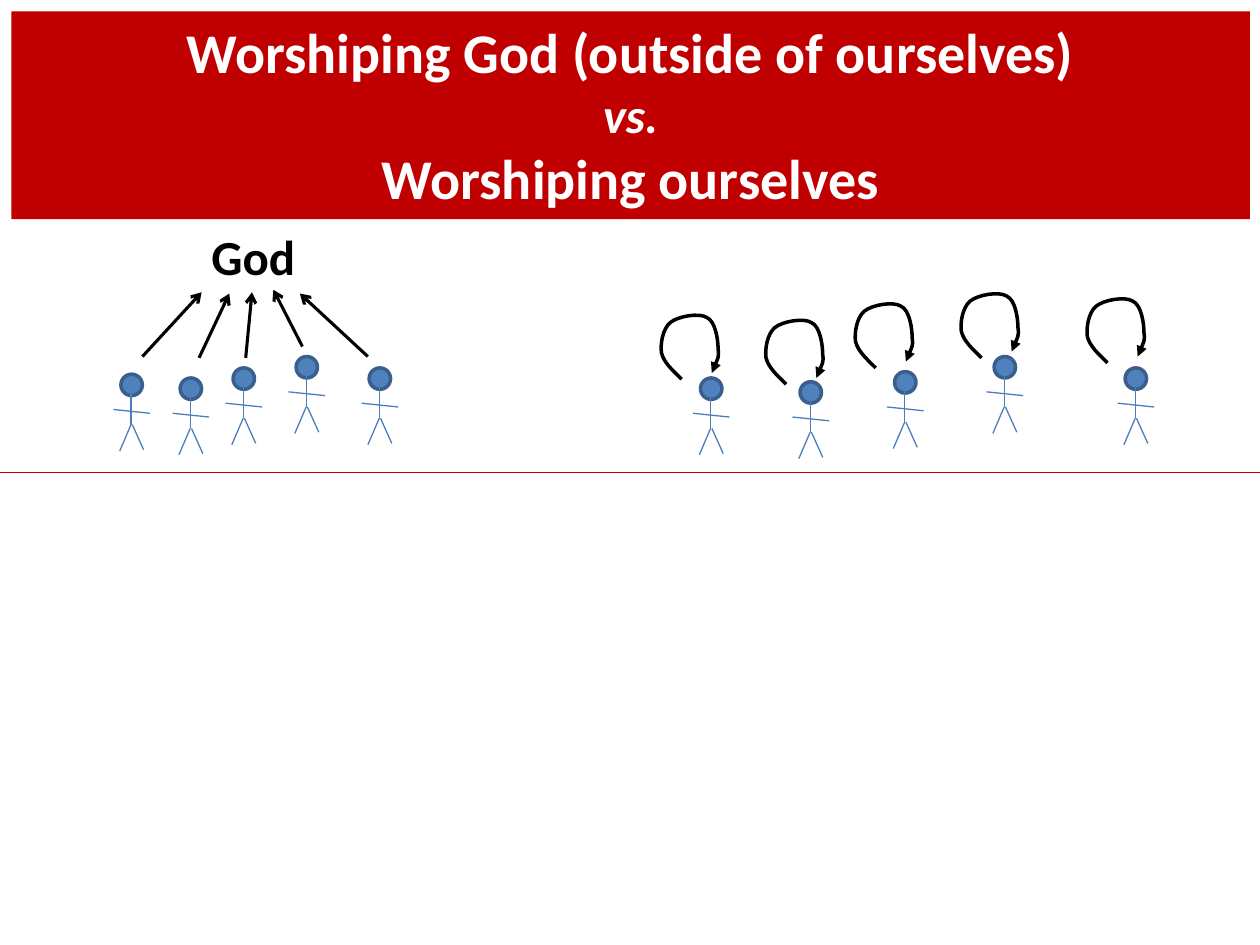
"""Build a slide contrasting worship of God with worship of ourselves."""
from lxml.etree import SubElement
from pptx import Presentation
from pptx.dml.color import RGBColor
from pptx.enum.shapes import MSO_CONNECTOR, MSO_SHAPE
from pptx.enum.text import MSO_ANCHOR, MSO_AUTO_SIZE, PP_ALIGN
from pptx.oxml.ns import qn
from pptx.util import Inches, Pt

COLORS = {
    "banner": "C00000", "banner_text": "FFFFFF", "ink": "000000",
    "head": "4F81BD", "head_line": "3A5F8C", "limb": "4B7EBC",
}
FONT = "Calibri"
TITLE = [
    ("Worshiping God (outside of ourselves)", 32, False),
    ("vs.", 28, True),
    ("Worshiping ourselves", 32, False),
]
HEAD_SIZE = 0.17
GOD_WORSHIPERS = [(0.96, 2.97), (1.43, 3), (1.85, 2.92), (2.35, 2.83), (2.93, 2.92)]
SELF_WORSHIPERS = [(5.56, 3), (6.35, 3.03), (7.1, 2.95), (7.89, 2.83), (8.93, 2.92)]
LIMBS = [
    ((0.08, 0.14), (0.08, 0.4)),
    ((0.09, 0.4), (0.18, 0.6)),
    ((0.08, 0.4), (-0.01, 0.61)),
    ((-0.06, 0.28), (0.23, 0.31)),
]
ARROWS_TO_GOD = [
    ((1.13, 2.83), (1.6, 2.32)),
    ((1.58, 2.84), (1.82, 2.33)),
    ((1.95, 2.84), (2, 2.32)),
    ((2.4, 2.75), (2.17, 2.3)),
    ((2.92, 2.83), (2.38, 2.33)),
]
LOOP_ORIGINS = [(8.63, 2.37), (7.63, 2.33), (6.79, 2.41), (6.08, 2.54), (5.25, 2.5)]
LOOP_SIZE = (0.46, 0.51)
LOOP_OUTLINE = [
    ("moveTo", [(0.16, 0.51)]),
    ("cubicBezTo", [(0.09, 0.44), (0.02, 0.38), (0, 0.3)]),
    ("cubicBezTo", [(-0.01, 0.23), (0.01, 0.11), (0.07, 0.06)]),
    ("cubicBezTo", [(0.13, 0.01), (0.3, -0.02), (0.36, 0.02)]),
    ("cubicBezTo", [(0.43, 0.05), (0.45, 0.2), (0.45, 0.27)]),
    ("cubicBezTo", [(0.46, 0.34), (0.4, 0.46), (0.4, 0.46)]),
    ("lnTo", [(0.4, 0.46)]),
]


def color(name):
    return RGBColor.from_string(COLORS[name])


def style_line(shape, name, width, arrowhead=None):
    shape.line.color.rgb = color(name)
    shape.line.width = Pt(width)
    if arrowhead:
        SubElement(shape.line._get_or_add_ln(), qn("a:tailEnd"), type=arrowhead)


def add_line(slide, start, end, name, width, arrowhead=None):
    points = [Inches(value) for value in (*start, *end)]
    connector = slide.shapes.add_connector(MSO_CONNECTOR.STRAIGHT, *points)
    style_line(connector, name, width, arrowhead)
    SubElement(connector._element.spPr, qn("a:effectLst"))


def write_text(shape, lines, name, alignment):
    frame = shape.text_frame
    frame.word_wrap = True
    frame.auto_size = MSO_AUTO_SIZE.SHAPE_TO_FIT_TEXT
    frame.vertical_anchor = MSO_ANCHOR.TOP
    for index, (text, size, italic) in enumerate(lines):
        paragraph = frame.add_paragraph() if index else frame.paragraphs[0]
        paragraph.text = text
        paragraph.alignment = alignment
        font = paragraph.font
        font.name, font.size, font.bold, font.italic = FONT, Pt(size), True, italic
        font.color.rgb = color(name)


def add_person(slide, left, top):
    head = slide.shapes.add_shape(
        MSO_SHAPE.OVAL, Inches(left), Inches(top), Inches(HEAD_SIZE), Inches(HEAD_SIZE))
    head.shadow.inherit = False
    head.fill.solid()
    head.fill.fore_color.rgb = color("head")
    style_line(head, "head_line", 2)
    for start, end in LIMBS:
        add_line(slide, (left + start[0], top + start[1]),
                 (left + end[0], top + end[1]), "limb", 0.75)


def add_loop(slide, left, top):
    width, height = LOOP_SIZE
    builder = slide.shapes.build_freeform(Inches(left), Inches(top))
    builder.add_line_segments([(Inches(left + width), Inches(top + height))], close=False)
    loop = builder.convert_to_shape()
    outline = loop._element.spPr.find(".//" + qn("a:path"))
    for segment in list(outline):
        outline.remove(segment)
    for command, points in LOOP_OUTLINE:
        segment = SubElement(outline, qn("a:" + command))
        for x, y in points:
            SubElement(segment, qn("a:pt"), x=str(Inches(x)), y=str(Inches(y)))
    loop.shadow.inherit = False
    loop.fill.background()
    style_line(loop, "ink", 2, "triangle")


def main():
    presentation = Presentation()
    presentation.slide_width, presentation.slide_height = Inches(10), Inches(7.5)
    slide = presentation.slides.add_slide(presentation.slide_layouts[6])

    banner = slide.shapes.add_shape(
        MSO_SHAPE.RECTANGLE, Inches(0.09), Inches(0.09), Inches(9.83), Inches(1.65))
    banner.shadow.inherit = False
    banner.fill.solid()
    banner.fill.fore_color.rgb = color("banner")
    banner.line.fill.background()
    write_text(banner, TITLE, "banner_text", PP_ALIGN.CENTER)
    add_line(slide, (0, 3.75), (10, 3.75), "banner", 0.75)

    for position in GOD_WORSHIPERS:
        add_person(slide, *position)
    god = slide.shapes.add_textbox(Inches(1.58), Inches(1.75), Inches(1.09), Inches(0.57))
    write_text(god, [("God", 28, False)], "ink", PP_ALIGN.LEFT)
    for start, end in ARROWS_TO_GOD:
        add_line(slide, start, end, "ink", 1.75, "arrow")
    for position in SELF_WORSHIPERS:
        add_person(slide, *position)
    for origin in LOOP_ORIGINS:
        add_loop(slide, *origin)

    presentation.save("out.pptx")


if __name__ == "__main__":
    main()
